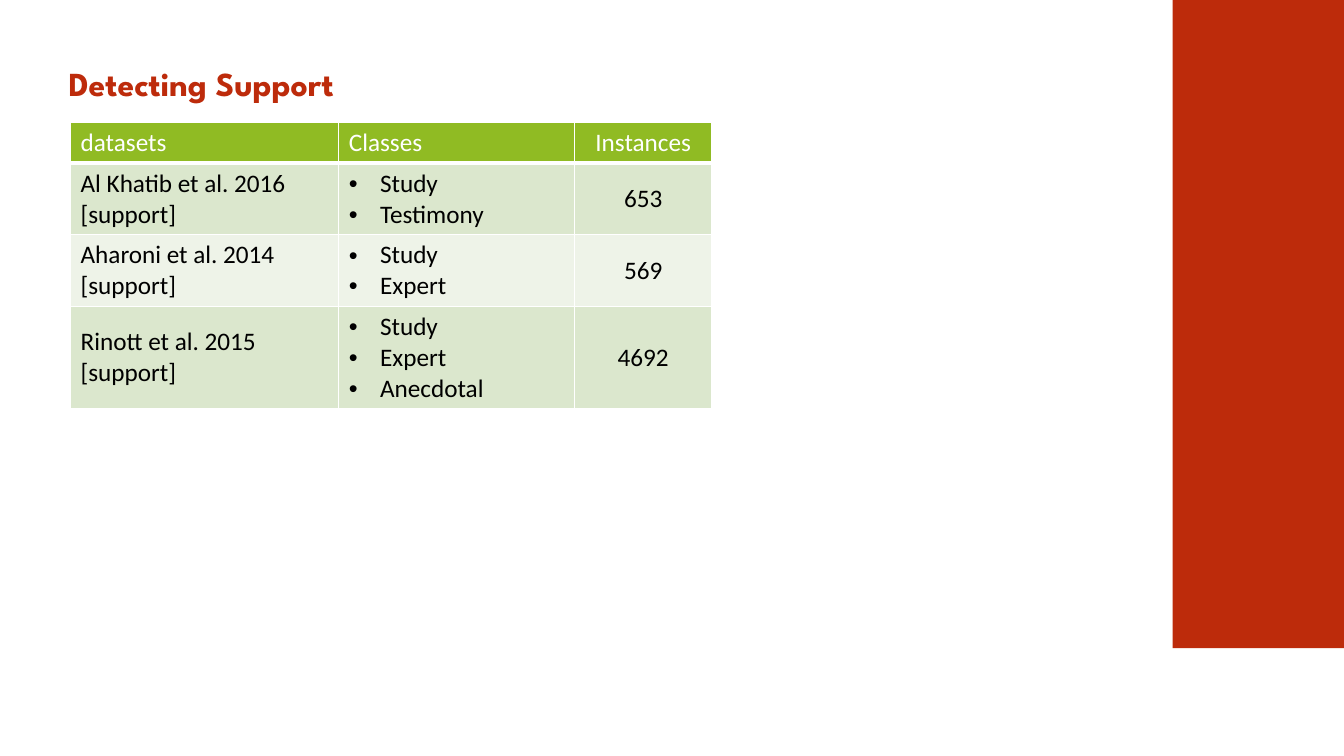
from lxml import etree
from pptx import Presentation
from pptx.dml.color import RGBColor
from pptx.enum.shapes import MSO_SHAPE
from pptx.enum.text import MSO_ANCHOR, PP_ALIGN
from pptx.oxml import parse_xml
from pptx.oxml.ns import qn
from pptx.util import Inches, Pt

RED = RGBColor(0xBD, 0x2B, 0x0B)
GREEN = RGBColor(0x90, 0xBB, 0x23)
BAND_DARK = RGBColor(0xDB, 0xE7, 0xCD)
BAND_LIGHT = RGBColor(0xEE, 0xF3, 0xE8)
WHITE = RGBColor(0xFF, 0xFF, 0xFF)
BLACK = RGBColor(0, 0, 0)
LEFT, CENTER = PP_ALIGN.LEFT, PP_ALIGN.CENTER
TOP, MIDDLE = MSO_ANCHOR.TOP, MSO_ANCHOR.MIDDLE
A_NS = "http://schemas.openxmlformats.org/drawingml/2006/main"

COLUMN_WIDTHS = [2.66, 2.34, 1.36]
ROW_HEIGHTS = [0.41, 0.71, 0.71, 1.01]
ROWS = [
    [["datasets"], ["Classes"], ["Instances"]],
    [["Al Khatib et al. 2016", "[support]"], ["Study", "Testimony"], ["653"]],
    [["Aharoni et al. 2014", "[support]"], ["Study", "Expert"], ["569"]],
    [["Rinott et al. 2015", "[support]"], ["Study", "Expert", "Anecdotal"], ["4692"]],
]


def set_borders(cell, bottom_width):
    """Draw white cell borders, 1 pt except for the bottom one."""
    tcPr = cell._tc.get_or_add_tcPr()
    widths = {"lnL": 1, "lnR": 1, "lnT": 1, "lnB": bottom_width}
    for i, (side, width) in enumerate(widths.items()):
        tcPr.insert(i, parse_xml(
            f'<a:{side} xmlns:a="{A_NS}" w="{Pt(width)}"><a:solidFill>'
            f'<a:srgbClr val="{WHITE}"/></a:solidFill></a:{side}>'))


def add_bullet(p):
    pPr = p._p.get_or_add_pPr()
    pPr.set("marL", str(Inches(0.31)))
    pPr.set("indent", str(-Inches(0.31)))
    etree.SubElement(pPr, qn("a:buFont")).set("typeface", "Arial")
    etree.SubElement(pPr, qn("a:buChar")).set("char", "•")


prs = Presentation()
prs.slide_width, prs.slide_height = Inches(13.33), Inches(7.5)
s = prs.slides.add_slide(prs.slide_layouts[5])

# Title
title = s.shapes.title
title.left, title.top = Inches(0.58), Inches(0.52)
title.width, title.height = Inches(12.28), Inches(0.71)
tf = title.text_frame
tf.vertical_anchor = MIDDLE
p = tf.paragraphs[0]
p.alignment = LEFT
p.line_spacing = Pt(22)
r = p.add_run()
r.text = "Detecting Support"
title_font = {"name": "League Spartan", "size": Pt(24), "bold": True}
for key, value in title_font.items():
    setattr(r.font, key, value)
r.font.color.rgb = RED

# Dataset table
table = s.shapes.add_table(
    len(ROWS), len(COLUMN_WIDTHS), Inches(0.7), Inches(1.21),
    Inches(sum(COLUMN_WIDTHS)), Inches(sum(ROW_HEIGHTS))).table
for column, width in zip(table.columns, COLUMN_WIDTHS):
    column.width = Inches(width)
for row, height in zip(table.rows, ROW_HEIGHTS):
    row.height = Inches(height)

cell_font = {"name": "Calibri", "size": Pt(18), "bold": False}
for i, row in enumerate(ROWS):
    header = i == 0
    for j, lines in enumerate(row):
        cell = table.cell(i, j)
        cell.vertical_anchor = TOP if header else MIDDLE
        cell.fill.solid()
        cell.fill.fore_color.rgb = GREEN if header else BAND_DARK if i % 2 else BAND_LIGHT
        set_borders(cell, 3 if header else 1)
        tf = cell.text_frame
        for n, line in enumerate(lines):
            p = tf.add_paragraph() if n else tf.paragraphs[0]
            p.alignment = CENTER if j == 2 else LEFT
            if j == 1 and not header:
                add_bullet(p)
            r = p.add_run()
            r.text = line
            for key, value in cell_font.items():
                setattr(r.font, key, value)
            r.font.color.rgb = WHITE if header else BLACK

# Red side panel
panel = s.shapes.add_shape(
    MSO_SHAPE.RECTANGLE, Inches(11.63), 0, Inches(1.7), Inches(6.43))
panel.shadow.inherit = False
panel.fill.solid()
panel.fill.fore_color.rgb = RED
panel.line.fill.background()

prs.save("out.pptx")
